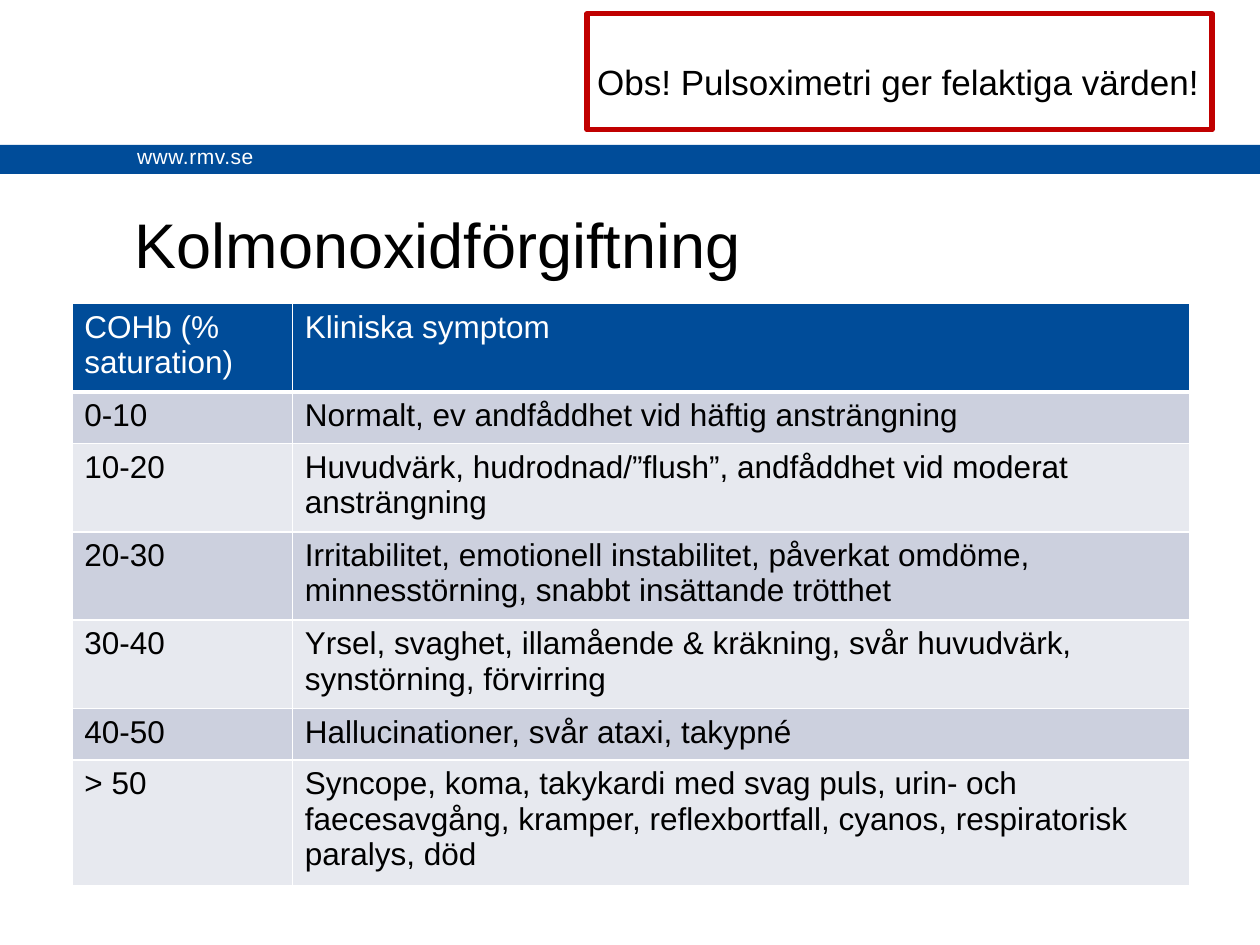
from pptx import Presentation
from pptx.dml.color import RGBColor
from pptx.enum.shapes import MSO_SHAPE
from pptx.enum.text import MSO_ANCHOR, PP_ALIGN
from pptx.oxml import parse_xml
from pptx.oxml.ns import nsdecls
from pptx.util import Inches, Pt

# Content
SITE = "www.rmv.se"
TITLE = "Kolmonoxidförgiftning"
WARNING = "Obs! Pulsoximetri ger felaktiga värden!"
ROWS = [
    ("COHb (% saturation)", "Kliniska symptom"),
    ("0-10", "Normalt, ev andfåddhet vid häftig ansträngning"),
    ("10-20", "Huvudvärk, hudrodnad/”flush”, andfåddhet vid moderat ansträngning"),
    ("20-30", "Irritabilitet, emotionell instabilitet, påverkat omdöme, "
              "minnesstörning, snabbt insättande trötthet"),
    ("30-40", "Yrsel, svaghet, illamående & kräkning, svår huvudvärk, "
              "synstörning, förvirring"),
    ("40-50", "Hallucinationer, svår ataxi, takypné"),
    ("> 50", "Syncope, koma, takykardi med svag puls, urin- och faecesavgång, "
             "kramper, reflexbortfall, cyanos, respiratorisk paralys, död"),
]
COL_WIDTHS = (1.75, 7.12)
ROW_HEIGHT = 0.41
BLUE, RED, WHITE, BLACK = "004C99", "C00000", "FFFFFF", "000000"
BANDS = ("E7E9EF", "CCD0DE")


def color(value):
    return RGBColor.from_string(value)


def box(at):
    return [Inches(v) for v in at]


def write(tf, text, size, ink, insets=None, wrap=True):
    """Put one left-aligned paragraph in a frame; insets are left, top, right, bottom."""
    tf.word_wrap = wrap
    tf.vertical_anchor = MSO_ANCHOR.TOP
    for side, inset in zip(("left", "top", "right", "bottom"), insets or ()):
        setattr(tf, f"margin_{side}", Inches(inset))
    p = tf.paragraphs[0]
    p.alignment = PP_ALIGN.LEFT
    r = p.add_run()
    r.text = text
    for name, value in {"name": "Arial", "size": Pt(size)}.items():
        setattr(r.font, name, value)
    r.font.color.rgb = color(ink)
    return r


def add_rect(at):
    sp = s.shapes.add_shape(MSO_SHAPE.RECTANGLE, *box(at))
    sp.shadow.inherit = False
    return sp


def set_borders(cell, widths):
    tc_pr = cell._tc.get_or_add_tcPr()
    for i, (side, width) in enumerate(widths.items()):
        tc_pr.insert(i, parse_xml(
            f'<a:ln{side} {nsdecls("a")} w="{Pt(width)}"><a:solidFill>'
            f'<a:srgbClr val="{WHITE}"/></a:solidFill></a:ln{side}>'))


prs = Presentation()
prs.slide_width, prs.slide_height = Inches(10), Inches(7.5)
s = prs.slides.add_slide(prs.slide_layouts[6])

# Blue band with the site address
band = add_rect((0, 1.15, 10, 0.23))
band.fill.solid()
band.fill.fore_color.rgb = color(BLUE)
band.line.fill.background()
site = s.shapes.add_textbox(*box((0.99, 1.09, 1.13, 0.3)))
r = write(site.text_frame, SITE, 12, WHITE, wrap=False)
r.font._element.set("spc", "30")

# Title
title = s.shapes.add_textbox(*box((1.07, 1.58, 7.52, 0.89)))
write(title.text_frame, TITLE, 36, BLACK, (0, 0.05, 0, 0))

# Symptom table
frame = s.shapes.add_table(len(ROWS), len(COL_WIDTHS), *box(
    (0.57, 2.41, sum(COL_WIDTHS), ROW_HEIGHT * len(ROWS))))
table = frame.table
for column, width in zip(table.columns, COL_WIDTHS):
    column.width = Inches(width)
for i, texts in enumerate(ROWS):
    table.rows[i].height = Inches(ROW_HEIGHT)
    for j, text in enumerate(texts):
        cell = table.cell(i, j)
        write(cell.text_frame, text, 18, BLACK if i else WHITE)
        cell.fill.solid()
        cell.fill.fore_color.rgb = color(BANDS[i % 2] if i else BLUE)
        set_borders(cell, {"L": 1, "R": 1, "T": 3 if i == 1 else 1,
                           "B": 1 if i else 3})

# Warning box
warning = add_rect((4.66, 0.11, 4.96, 0.92))
warning.fill.background()
warning.line.color.rgb = color(RED)
warning.line.width = Pt(3)
write(warning.text_frame, WARNING, 20, BLACK, (0.08, 0.37, 0, 0))

prs.save("out.pptx")
